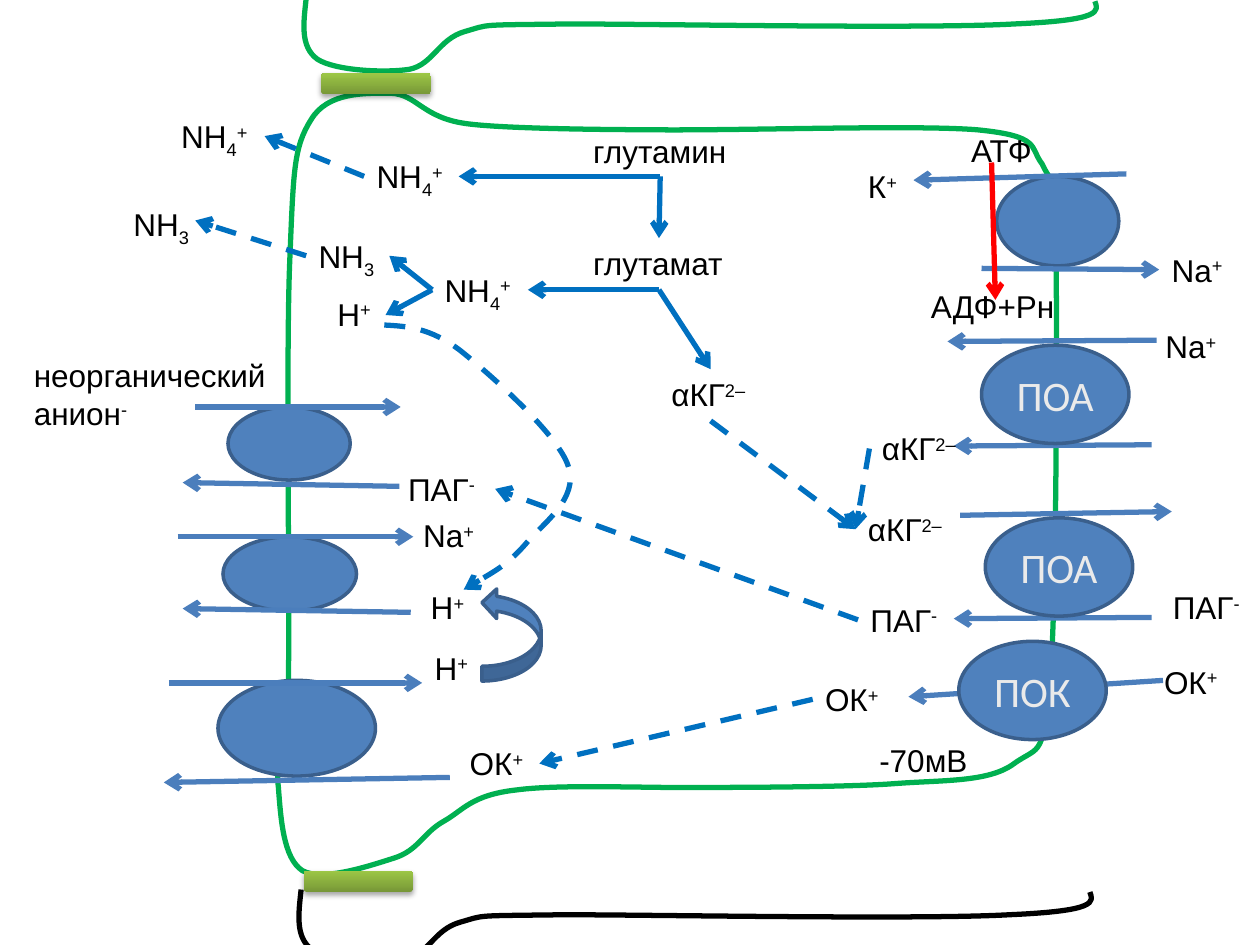
"""Slide: transport of organic ions and ammonium across a renal tubule cell."""
from dataclasses import dataclass

from lxml import etree
from pptx import Presentation
from pptx.dml.color import RGBColor
from pptx.enum.dml import MSO_LINE
from pptx.enum.shapes import MSO_CONNECTOR, MSO_SHAPE
from pptx.enum.text import MSO_ANCHOR, MSO_AUTO_SIZE, PP_ALIGN
from pptx.oxml import parse_xml
from pptx.oxml.ns import nsdecls, qn
from pptx.util import Inches, Pt

DASH = MSO_LINE.DASH
STRAIGHT = MSO_CONNECTOR.STRAIGHT
OVAL = MSO_SHAPE.OVAL
ROUNDED = MSO_SHAPE.ROUNDED_RECTANGLE
CURVED_UP = MSO_SHAPE.CURVED_UP_ARROW
COLS, ROWS = 10, 7.5


@dataclass(frozen=True)
class Theme:
    """Colours, fonts and sizes of the slide."""
    background: str = "FFFFFF"
    membrane: str = "00B050"
    neighbour: str = "000000"
    carrier: str = "4F81BD"
    outline: str = "3A5F8C"
    transport: str = "4B7EBC"
    reaction: str = "0070C0"
    energy: str = "FF0000"
    junction: tuple = ("779737", "9DC746")
    ink: str = "000000"
    carrier_ink: str = "EAEAEA"
    label_font: str = "Arial"
    label_size: int = 18
    carrier_font: str = "Calibri"
    carrier_size: int = 24
    stroke: int = 3
    border: int = 2


THEME = Theme()

CELL = [
    (2.29, 5.37), (2.3, 4.68), (2.27, 2.82), (2.3, 2.08), (2.33, 1.35), (2.33, 1.17), (2.47, 0.95),
    (2.6, 0.73), (2.9, 0.74), (3.1, 0.74), (3.31, 0.75), (3.35, 0.93), (3.69, 0.98),
    (4.03, 1.03), (5.14, 1.03), (5.14, 1.03), (5.82, 1.04), (7.23, 0.99), (7.75, 1.03),
    (8.27, 1.08), (8.17, 1.17), (8.27, 1.3), (8.45, 1.67), (8.37, 1.13), (8.38, 1.8),
    (8.39, 2.47), (8.39, 4.62), (8.34, 5.33), (8.28, 6.04), (8.26, 5.91), (8.05, 6.06),
    (7.85, 6.21), (7.49, 6.19), (7.1, 6.22), (6.71, 6.25), (5.71, 6.25), (5.71, 6.25),
    (5.21, 6.26), (4.47, 6.22), (4.1, 6.27), (3.74, 6.31), (3.68, 6.43), (3.52, 6.52),
    (3.36, 6.61), (3.32, 6.75), (3.13, 6.81), (2.94, 6.87), (2.56, 7), (2.4, 6.91),
    (2.25, 6.81), (2.23, 6.51), (2.21, 6.25), (2.18, 5.99), (2.27, 6.07), (2.29, 5.37)]
NEIGHBOUR = [
    (2.43, -0.01), (2.41, 0.18), (2.38, 0.37), (2.52, 0.47), (2.66, 0.56), (3.05, 0.58), (3.25, 0.55),
    (3.44, 0.51), (3.48, 0.31), (3.69, 0.25), (3.9, 0.19), (3.78, 0.2), (4.51, 0.19),
    (5.23, 0.19), (7.35, 0.23), (8.05, 0.19), (8.75, 0.16), (8.72, 0.09), (8.69, 0.01)]
NEIGHBOUR_SHIFT = (-0.04, 7.07)
PROTON_ROUTE = [
    (3.05, 2.58), (3.23, 2.59), (3.41, 2.6), (3.65, 2.78), (3.89, 2.97), (4.43, 3.45), (4.51, 3.7),
    (4.6, 3.96), (4.3, 4.16), (4.17, 4.32), (4.03, 4.48), (3.85, 4.58), (3.68, 4.68)]

JUNCTIONS = [(2.55, 0.58), (2.41, 6.91)]
PUMPS = [(7.91, 1.4, 0.97, 0.71), (1.81, 3.23, 0.97, 0.58),
         (1.77, 4.26, 1.06, 0.59), (1.73, 5.4, 1.25, 0.76)]
CARRIERS = [("ПОА", 7.79, 2.74), ("ПОА", 7.82, 4.11), ("ПОК", 7.61, 5.09)]

TRANSPORT = [
    (8.94, 1.38, 7.25, 1.43), (7.79, 2.13, 9.2, 2.14), (9.18, 2.7, 7.52, 2.71),
    (9.14, 3.53, 7.57, 3.54), (7.62, 4.09, 9.3, 4.06), (9.14, 4.9, 7.57, 4.91),
    (9.23, 5.4, 7.21, 5.53), (1.55, 3.23, 3.18, 3.23), (3.17, 3.86, 1.45, 3.83),
    (1.41, 4.26, 3.28, 4.26), (3.26, 4.86, 1.45, 4.83), (1.34, 5.42, 3.35, 5.42),
    (3.57, 6.17, 1.3, 6.21)]
REACTIONS = [
    (5.24, 1.4, 5.23, 1.89), (5.24, 1.4, 3.64, 1.4), (5.23, 2.3, 5.64, 2.93),
    (5.23, 2.3, 4.19, 2.3), (3.43, 2.3, 3.09, 2.03), (3.43, 2.3, 3.06, 2.5)]
DIFFUSION = [
    (6.9, 3.56, 6.79, 4.2), (5.64, 3.34, 6.79, 4.2), (6.81, 4.92, 3.93, 3.88),
    (6.45, 5.55, 4.28, 6.06), (2.89, 1.4, 2.1, 1.08), (2.43, 2.03, 1.55, 1.75)]
ENERGY = [(7.87, 1.29, 7.9, 2.38)]

BASELINES = {"^": "30000", "_": "-25000"}
LABELS = {
    "Na|^+": (0.62, [(9.2, 1.94), (9.15, 2.55), (3.26, 4.05)]),
    "К|^+": (0.45, [(6.79, 1.28)]),
    "Н|^+": (0.48, [(2.58, 2.29), (3.32, 4.62), (3.35, 5.1)]),
    "ОК|^+": (0.64, [(9.14, 5.21), (6.45, 5.35), (3.63, 5.86)]),
    "ПАГ|^-": (0.79, [(9.21, 4.62), (6.81, 4.72), (3.14, 3.68)]),
    "αКГ|^2–": (0.82, [(5.23, 2.93), (6.9, 3.36), (6.79, 4)]),
    "NН|_4|^+": (0.76, [(1.34, 0.88), (2.89, 1.2), (3.43, 2.1)]),
    "NН|_3": (0.66, [(0.96, 1.58), (2.43, 1.83)]),
    "АТФ": (0.69, [(7.61, 0.99)]),
    "АДФ+Рн": (1.19, [(7.29, 2.23)]),
    "глутамин": (1.27, [(4.61, 1)]),
    "глутамат": (1.24, [(4.61, 1.89)]),
    "-70мВ": (0.91, [(6.88, 5.83)]),
    "неорганический\nанион|^-": (2.17, [(0.17, 2.78)]),
}


def rgb(value):
    """Turn a hex string into a colour."""
    return RGBColor.from_string(value)


def style_line(line, color, dashed=False, arrow=False):
    """Set colour, weight, dash and arrowhead of a line."""
    line.color.rgb = rgb(color)
    line.width = Pt(THEME.stroke)
    if dashed:
        line.dash_style = DASH
    if arrow:
        ln = line.fill._xPr
        etree.SubElement(ln, qn("a:tailEnd"), type="arrow")


def add_curve(s, points, color, closed=False, **style):
    """Draw a Bezier outline from an anchor followed by triples of points."""
    start, *rest = [(Inches(x), Inches(y)) for x, y in points]
    builder = s.shapes.build_freeform(*start)
    builder.add_line_segments(rest, close=closed)
    sp = builder.convert_to_shape()
    segments = list(sp._element.iter(qn("a:lnTo")))
    for i in range(0, len(rest), 3):
        bezier = etree.Element(qn("a:cubicBezTo"))
        segments[i].addprevious(bezier)
        for segment in segments[i:i + 3]:
            bezier.append(segment[0])
            segment.getparent().remove(segment)
    sp.shadow.inherit = False
    sp.fill.background()
    style_line(sp.line, color, **style)


def add_arrow(s, ends, color, dashed=False):
    """Draw a straight arrow between two grid points."""
    c = s.shapes.add_connector(STRAIGHT, *map(Inches, ends))
    style_line(c.line, color, dashed, arrow=True)
    etree.SubElement(c._element.spPr, qn("a:effectLst"))


def add_body(s, kind, box):
    """Add an outlined shape in the carrier colours."""
    sp = s.shapes.add_shape(kind, *map(Inches, box))
    sp.shadow.inherit = False
    sp.fill.solid()
    sp.fill.fore_color.rgb = rgb(THEME.carrier)
    sp.line.color.rgb = rgb(THEME.outline)
    sp.line.width = Pt(THEME.border)
    return sp


def set_font(p, name, size, color):
    """Set the font of a whole paragraph."""
    p.font.name = name
    p.font.size = Pt(size)
    p.font.color.rgb = rgb(color)


def add_carrier(s, name, x, y):
    """Add a named carrier protein."""
    tf = add_body(s, OVAL, (x, y, 1.17, 0.78)).text_frame
    tf.vertical_anchor = MSO_ANCHOR.MIDDLE
    tf.word_wrap = False
    p = tf.paragraphs[0]
    p.text = name
    p.alignment = PP_ALIGN.CENTER
    set_font(p, THEME.carrier_font, THEME.carrier_size, THEME.carrier_ink)


def add_junction(s, x, y):
    """Add a tight junction with a gradient and a soft shadow."""
    sp = s.shapes.add_shape(ROUNDED, *map(Inches, (x, y, 0.87, 0.17)))
    sp.line.fill.background()
    sp.fill.gradient()
    sp.fill.gradient_angle = 90
    for stop, color in zip(sp.fill.gradient_stops, THEME.junction):
        stop.color.rgb = rgb(color)
    sp.shadow.inherit = False
    effects = sp._element.spPr.find(qn("a:effectLst"))
    effects.append(parse_xml(
        f'<a:outerShdw {nsdecls("a")} blurRad="{Pt(3.1)}" dist="{Pt(1.8)}" dir="5400000" rotWithShape="0">'
        '<a:srgbClr val="000000"><a:alpha val="35000"/></a:srgbClr></a:outerShdw>'))


def add_label(s, text, x, y, width):
    """Add a label whose parts marked ^ or _ are raised or lowered."""
    lines = text.split("\n")
    height = 0.1 + 0.3 * len(lines)
    tf = s.shapes.add_textbox(*map(Inches, (x, y, width, height))).text_frame
    tf.word_wrap = False
    tf.auto_size = MSO_AUTO_SIZE.SHAPE_TO_FIT_TEXT
    for i, line in enumerate(lines):
        p = tf.add_paragraph() if i else tf.paragraphs[0]
        set_font(p, THEME.label_font, THEME.label_size, THEME.ink)
        for part in line.split("|"):
            r = p.add_run()
            r.text = part.lstrip("^_")
            if part[0] in BASELINES:
                r.font._element.set("baseline", BASELINES[part[0]])


def main():
    """Build the slide and save it."""
    prs = Presentation()
    prs.slide_width, prs.slide_height = Inches(COLS), Inches(ROWS)
    s = prs.slides.add_slide(prs.slide_layouts[6])
    s.background.fill.solid()
    s.background.fill.fore_color.rgb = rgb(THEME.background)

    dx, dy = NEIGHBOUR_SHIFT
    add_curve(s, CELL, THEME.membrane, closed=True)
    add_curve(s, NEIGHBOUR, THEME.membrane)
    add_curve(s, [(x + dx, y + dy) for x, y in NEIGHBOUR], THEME.neighbour)
    for spot in JUNCTIONS:
        add_junction(s, *spot)
    for box in PUMPS:
        add_body(s, OVAL, box)
    for arrows, color, dashed in (
            (TRANSPORT, THEME.transport, False), (REACTIONS, THEME.reaction, False),
            (DIFFUSION, THEME.reaction, True), (ENERGY, THEME.energy, False)):
        for ends in arrows:
            add_arrow(s, ends, color, dashed)
    for carrier in CARRIERS:
        add_carrier(s, *carrier)
    add_body(s, CURVED_UP, (3.69, 4.8, 0.74, 0.47)).rotation = 270
    for text, (width, spots) in LABELS.items():
        for x, y in spots:
            add_label(s, text, x, y, width)
    add_curve(s, PROTON_ROUTE, THEME.reaction, dashed=True, arrow=True)
    prs.save("out.pptx")


if __name__ == "__main__":
    main()
